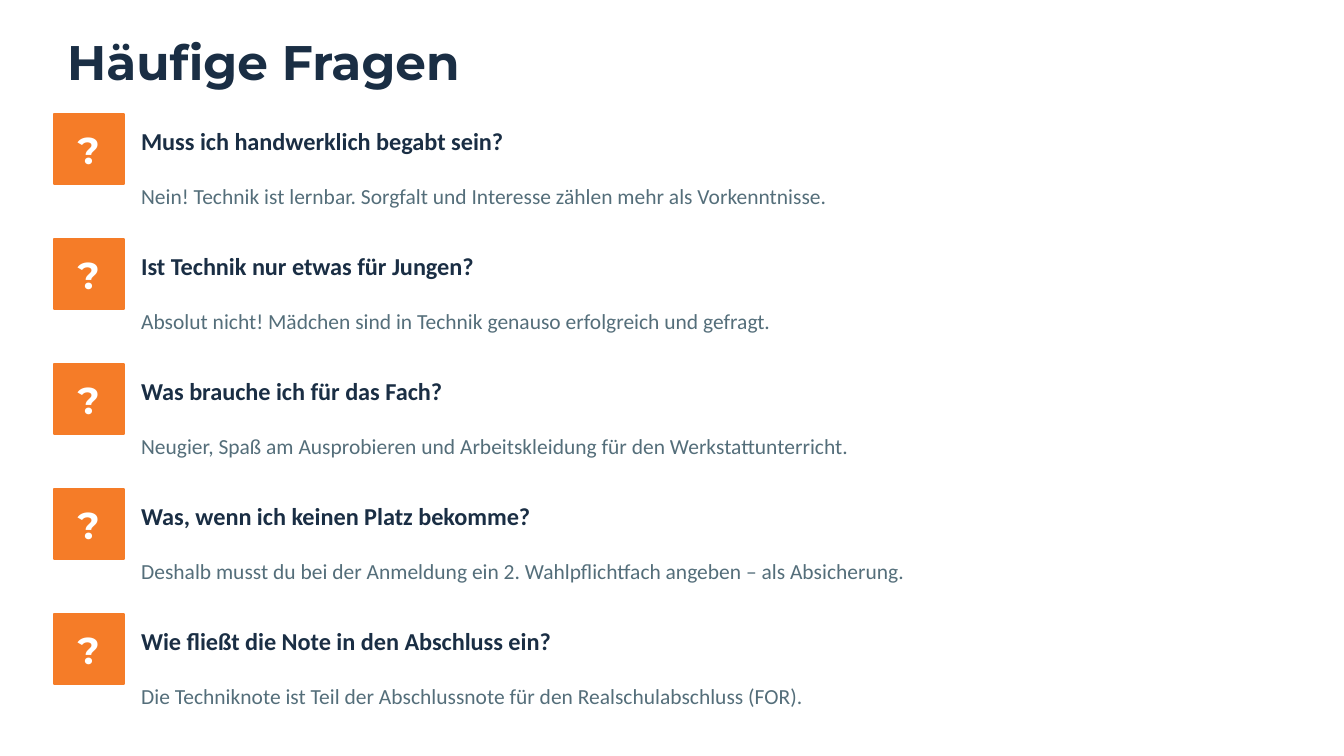
from pptx import Presentation
from pptx.dml.color import RGBColor
from pptx.enum.shapes import MSO_SHAPE
from pptx.enum.text import MSO_ANCHOR, PP_ALIGN
from pptx.util import Inches, Pt

RECT = MSO_SHAPE.RECTANGLE
MIDDLE = MSO_ANCHOR.MIDDLE
LEFT, CENTER = PP_ALIGN.LEFT, PP_ALIGN.CENTER

# Content
TITLE = "Häufige Fragen"
FAQ = [
    ("Muss ich handwerklich begabt sein?",
     "Nein! Technik ist lernbar. Sorgfalt und Interesse zählen mehr als Vorkenntnisse."),
    ("Ist Technik nur etwas für Jungen?",
     "Absolut nicht! Mädchen sind in Technik genauso erfolgreich und gefragt."),
    ("Was brauche ich für das Fach?",
     "Neugier, Spaß am Ausprobieren und Arbeitskleidung für den Werkstattunterricht."),
    ("Was, wenn ich keinen Platz bekomme?",
     "Deshalb musst du bei der Anmeldung ein 2. Wahlpflichtfach angeben – als Absicherung."),
    ("Wie fließt die Note in den Abschluss ein?",
     "Die Techniknote ist Teil der Abschlussnote für den Realschulabschluss (FOR)."),
]

# Style and grid
COLORS = {"navy": "1A2E44", "orange": "F57C28", "gray": "546E7A", "white": "FFFFFF"}
HEAD, BODY = "Montserrat", "Calibri"
WIDTH = 10
TOP, STEP = 0.85, 0.93
ICON_X, ICON = 0.4, 0.52
TEXT_X, TEXT_W = 1.05, 8.55


def color(name):
    return RGBColor.from_string(COLORS[name])


def add_text(slide, box, text, font, size, tint, bold=True, align=LEFT):
    frame = slide.shapes.add_textbox(*map(Inches, box)).text_frame
    frame.word_wrap = True
    frame.vertical_anchor = MIDDLE
    frame.margin_left = frame.margin_right = 0
    frame.margin_top = frame.margin_bottom = 0
    frame.text = text
    para = frame.paragraphs[0]
    para.alignment = align
    style = para.runs[0].font
    style.name, style.size, style.bold = font, Pt(size), bold
    style.color.rgb = color(tint)


def add_icon(slide, y):
    box = (ICON_X, y, ICON, ICON)
    square = slide.shapes.add_shape(RECT, *map(Inches, box))
    square.shadow.inherit = False
    square.fill.solid()
    square.fill.fore_color.rgb = color("orange")
    square.line.color.rgb = color("orange")
    square.line.width = Pt(1)
    add_text(slide, box, "?", HEAD, 20, "white", align=CENTER)


def main():
    # Widescreen 16:9 page
    deck = Presentation()
    deck.slide_width, deck.slide_height = Inches(WIDTH), Inches(WIDTH * 9 / 16)
    slide = deck.slides.add_slide(deck.slide_layouts[6])
    slide.background.fill.solid()
    slide.background.fill.fore_color.rgb = color("white")

    # Title
    add_text(slide, (0.5, 0.18, 9, 0.55), TITLE, HEAD, 26, "navy")

    # One row per question
    for row, (question, answer) in enumerate(FAQ):
        y = TOP + row * STEP
        add_icon(slide, y)
        add_text(slide, (TEXT_X, y + 0.02, TEXT_W, 0.35), question, BODY, 13, "navy")
        add_text(slide, (TEXT_X, y + 0.38, TEXT_W, 0.45), answer, BODY, 11.5, "gray", bold=False)

    deck.save("out.pptx")


if __name__ == "__main__":
    main()
